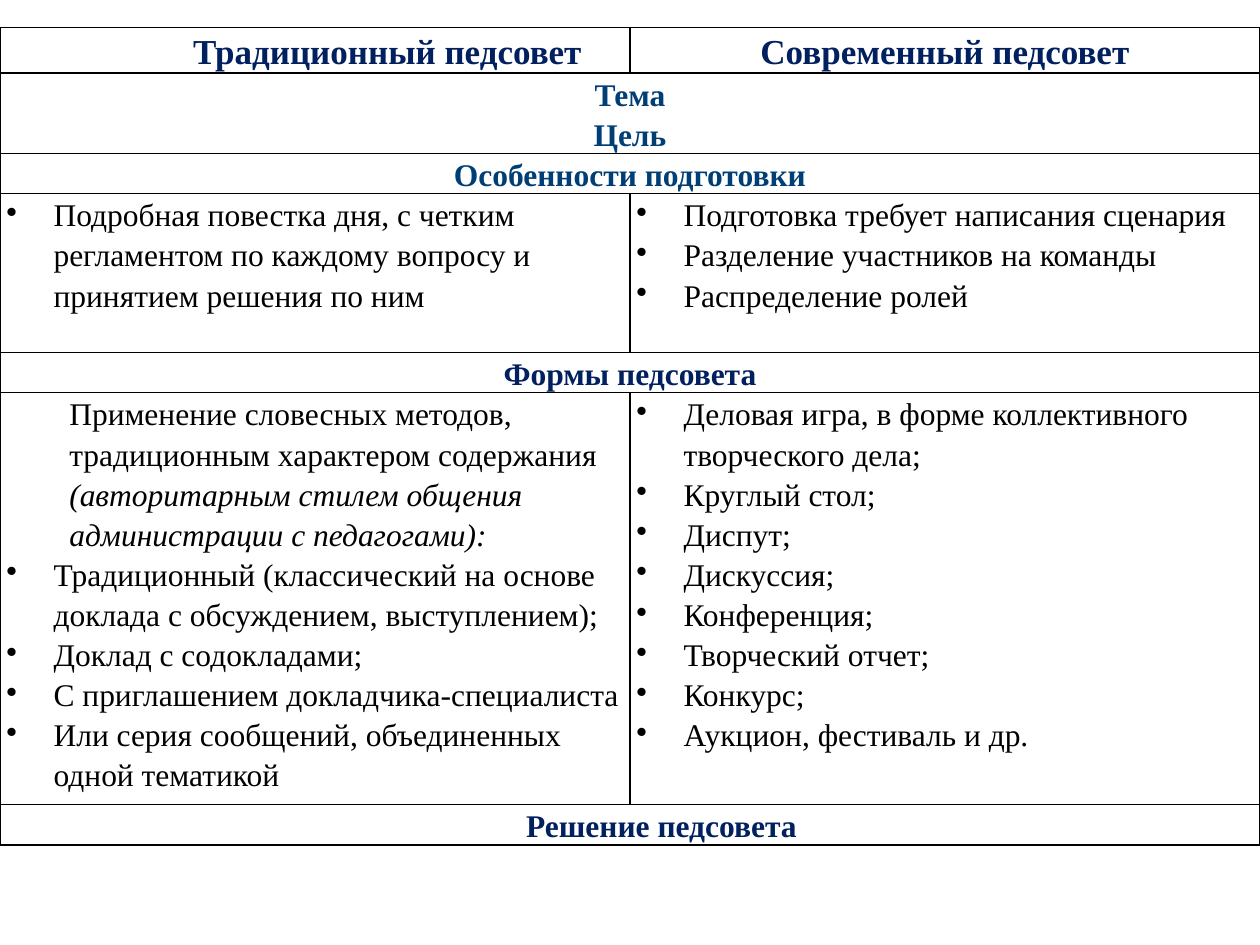
"""Build a slide comparing the traditional and the modern staff meeting."""
import pptx
import pptx.util
import pptx.dml.color
import pptx.enum.text
import pptx.oxml.ns
from lxml import etree

COLORS = {"head": "002060", "topic": "003F75", "text": "000000", "line": "000000"}
COLS, ROWS = 20, 75
HEAD = {"size": 20, "bold": True, "color": "head", "center": True}
SECTION = {**HEAD, "size": 18}
TOPIC = {**SECTION, "color": "topic"}
BODY = {"size": 18, "bold": False, "color": "text"}
BULLET = {**BODY, "left": 0.75, "hang": 0.75, "bullet": "•"}


def bullets(*lines):
    """Pair each line with the bullet format."""
    return [(line, BULLET) for line in lines]


CONTENT = [
    (3.6, [[("Традиционный педсовет", {**HEAD, "left": 2.3})],
           [("Современный педсовет", HEAD)]]),
    (6.3, [[("Тема", TOPIC), ("Цель", TOPIC)]]),
    (3.2, [[("Особенности подготовки", TOPIC)]]),
    (12.6, [
        bullets("Подробная повестка дня, с четким регламентом по каждому вопросу "
                "и принятием решения по ним"),
        bullets("Подготовка требует написания сценария",
                "Разделение участников на команды",
                "Распределение ролей")]),
    (3.2, [[("Формы педсовета", SECTION)]]),
    (32.7, [
        [(["Применение словесных методов, традиционным характером содержания ",
           "(авторитарным стилем общения администрации с педагогами):"],
          {**BODY, "left": 1})]
        + bullets("Традиционный (классический на основе доклада с обсуждением, выступлением);",
                  "Доклад с содокладами;",
                  "С приглашением докладчика-специалиста",
                  "Или серия сообщений, объединенных одной тематикой"),
        bullets("Деловая игра, в форме коллективного творческого дела;",
                "Круглый стол;", "Диспут;", "Дискуссия;", "Конференция;",
                "Творческий отчет;", "Конкурс;", "Аукцион, фестиваль и др.")]),
    (3.2, [[("Решение педсовета", {**SECTION, "left": 1})]]),
]


class Deck:
    """Hold the style, the presentation and the current slide."""

    def __init__(self, width, height, font):
        """Start a presentation with one blank slide."""
        self.prs = pptx.Presentation()
        self.prs.slide_width = pptx.util.Inches(width)
        self.prs.slide_height = pptx.util.Inches(height)
        self.font = font
        self.s = self.prs.slides.add_slide(self.prs.slide_layouts[6])

    def x(self, n):
        """Convert grid columns to a length."""
        return round(self.prs.slide_width * n / COLS)

    def y(self, n):
        """Convert grid rows to a length."""
        return round(self.prs.slide_height * n / ROWS)

    def border(self, cell):
        """Draw a thin line on all four sides of a cell."""
        tcPr = cell._tc.get_or_add_tcPr()
        for i, side in enumerate("LRTB"):
            ln = etree.Element(pptx.oxml.ns.qn("a:ln" + side), w=str(pptx.util.Pt(1)))
            fill = etree.SubElement(ln, pptx.oxml.ns.qn("a:solidFill"))
            etree.SubElement(fill, pptx.oxml.ns.qn("a:srgbClr"), val=COLORS["line"])
            tcPr.insert(i, ln)

    def paragraph(self, p, text, fmt):
        """Write one paragraph; a second run in it is italic."""
        p.line_spacing = 1.15
        align = pptx.enum.text.PP_ALIGN
        p.alignment = align.CENTER if fmt.get("center") else align.LEFT
        pPr = p._p.get_or_add_pPr()
        for name, value in {"marL": fmt.get("left", 0), "indent": -fmt.get("hang", 0)}.items():
            pPr.set(name, str(self.x(value)))
        if "bullet" in fmt:
            etree.SubElement(pPr, pptx.oxml.ns.qn("a:buChar"), char=fmt["bullet"])
        for i, part in enumerate([text] if isinstance(text, str) else text):
            r = p.add_run()
            r.text = part
            style = {"name": self.font, "size": pptx.util.Pt(fmt["size"]),
                     "bold": fmt["bold"], "italic": i > 0}
            for name, value in style.items():
                setattr(r.font, name, value)
            r.font.color.rgb = pptx.dml.color.RGBColor.from_string(COLORS[fmt["color"]])

    def cell(self, cell, paragraphs):
        """Fill one cell with formatted paragraphs."""
        tf = cell.text_frame
        for i, (text, fmt) in enumerate(paragraphs):
            self.paragraph(tf.add_paragraph() if i else tf.paragraphs[0], text, fmt)

    def table(self, left, top, width, content, cols):
        """Add a table; a row with a single cell spans all columns."""
        height = sum(h for h, _ in content)
        tbl = self.s.shapes.add_table(len(content), cols, self.x(left), self.y(top),
                                      self.x(width), self.y(height)).table
        for name in ("first_row", "horz_banding"):
            setattr(tbl, name, False)
        margins = {"margin_left": self.x(0.1), "margin_right": self.x(0.1),
                   "margin_top": 0, "margin_bottom": 0}
        for c in tbl.iter_cells():
            for name, value in margins.items():
                setattr(c, name, value)
            c.fill.background()
            self.border(c)
        for i, (h, cells) in enumerate(content):
            tbl.rows[i].height = self.y(h)
            if len(cells) == 1:
                tbl.cell(i, 0).merge(tbl.cell(i, cols - 1))
            for j, paragraphs in enumerate(cells):
                self.cell(tbl.cell(i, j), paragraphs)


def main():
    """Build and save the slide."""
    deck = Deck(10, 7.5, "Times New Roman")
    deck.table(0, 2.2, COLS, CONTENT, 2)
    deck.prs.save("out.pptx")


if __name__ == "__main__":
    main()
